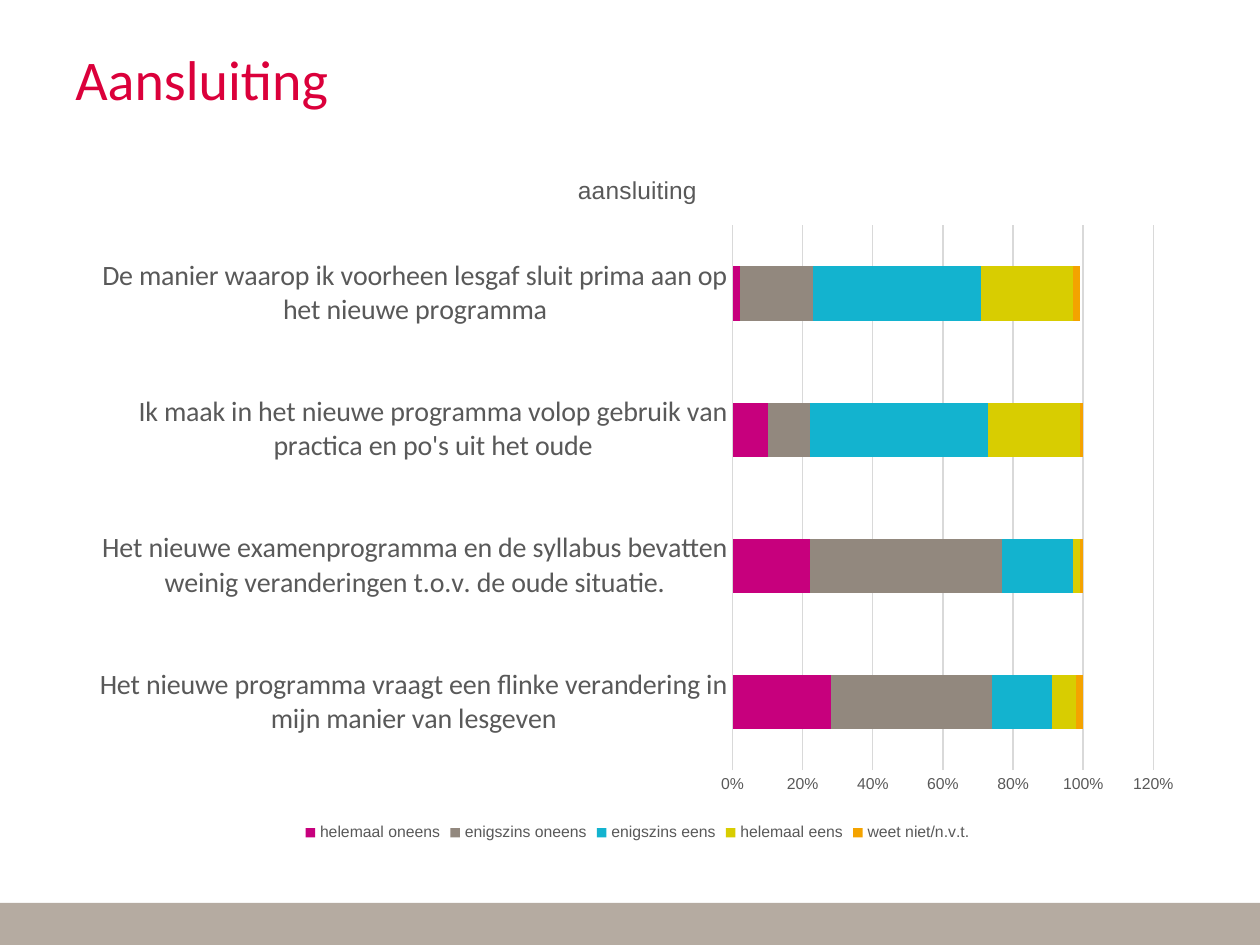
"""Builds the slide 'Aansluiting' with a stacked bar chart of survey answers."""
from typing import NamedTuple

from lxml.etree import SubElement
from pptx import Presentation
from pptx.chart.data import CategoryChartData
from pptx.dml.color import RGBColor
from pptx.enum.chart import XL_CHART_TYPE as ChartType
from pptx.enum.chart import XL_LEGEND_POSITION as LegendPosition
from pptx.enum.chart import XL_TICK_MARK as TickMark
from pptx.enum.shapes import MSO_SHAPE as Preset
from pptx.enum.text import MSO_ANCHOR as Anchor
from pptx.oxml.ns import qn
from pptx.util import Pt

GREY, GRID = "595959", "D9D9D9"


class Answer(NamedTuple):
    name: str
    color: str
    shares: tuple[float, ...]


STATEMENTS = (
    "Het nieuwe programma vraagt een flinke verandering in mijn manier van lesgeven",
    "Het nieuwe examenprogramma en de syllabus bevatten weinig veranderingen t.o.v. de oude situatie.",
    "Ik maak in het nieuwe programma volop gebruik van practica en po's uit het oude",
    "De manier waarop ik voorheen lesgaf sluit prima aan op het nieuwe programma",
)
ANSWERS = (
    Answer("helemaal oneens", "C7007D", (0.28, 0.22, 0.10, 0.02)),
    Answer("enigszins oneens", "92887E", (0.46, 0.55, 0.12, 0.21)),
    Answer("enigszins eens", "13B3CF", (0.17, 0.20, 0.51, 0.48)),
    Answer("helemaal eens", "D8CD01", (0.07, 0.02, 0.26, 0.26)),
    Answer("weet niet/n.v.t.", "F4A300", (0.02, 0.01, 0.01, 0.02)),
)
PLOT_LAYOUT = {"layoutTarget": "inner", "xMode": "edge", "yMode": "edge",
               "x": "0.585", "y": "0.11", "w": "0.376", "h": "0.78"}


def rgb(color: str) -> RGBColor:
    return RGBColor.from_string(color)


def apply(target, **values) -> None:
    for name, value in values.items():
        setattr(target, name, value)


def style_font(font, size: float, color: str, name: str = "Arial") -> None:
    apply(font, size=Pt(size), name=name, bold=False)
    font.color.rgb = rgb(color)


def style_line(line, color: str) -> None:
    line.color.rgb = rgb(color)
    line.width = Pt(0.75)


def add_footer(page) -> None:
    band = page.shapes.add_shape(Preset.RECTANGLE, Pt(0), Pt(516), Pt(720), Pt(24))
    band.shadow.inherit = False
    band.fill.solid()
    band.fill.fore_color.rgb = rgb("B5ABA1")
    band.line.fill.background()


def add_title(page, text: str) -> None:
    box = page.shapes.add_textbox(Pt(36), Pt(21.6), Pt(648), Pt(90))
    apply(box.text_frame, word_wrap=True, vertical_anchor=Anchor.TOP)
    span = box.text_frame.paragraphs[0].add_run()
    span.text = text
    style_font(span.font, 32, "DB003B", "Calibri")


def place_plot(chart) -> None:
    area = chart._chartSpace.chart.plotArea
    for old in area.findall(qn("c:layout")):
        area.remove(old)
    layout = SubElement(area, qn("c:layout"))
    area.insert(0, layout)
    manual = SubElement(layout, qn("c:manualLayout"))
    for tag, value in PLOT_LAYOUT.items():
        SubElement(manual, qn(f"c:{tag}")).set("val", value)


def add_survey_chart(page) -> None:
    data = CategoryChartData(number_format="0%")
    data.categories = STATEMENTS
    for answer in ANSWERS:
        data.add_series(answer.name, answer.shares)
    chart = page.shapes.add_chart(ChartType.BAR_STACKED, Pt(44.6), Pt(85),
                                  Pt(639.4), Pt(399), data).chart
    style_font(chart.font, 10, "000000")

    chart.has_title = True
    span = chart.chart_title.text_frame.paragraphs[0].add_run()
    span.text = "aansluiting"
    style_font(span.font, 14, GREY)
    chart.chart_title.include_in_layout = False

    chart.has_legend = True
    apply(chart.legend, position=LegendPosition.BOTTOM, include_in_layout=False)
    style_font(chart.legend.font, 9, GREY)

    plot = chart.plots[0]
    apply(plot, gap_width=150, overlap=100, vary_by_categories=False)
    for series, answer in zip(plot.series, ANSWERS):
        series.format.fill.solid()
        series.format.fill.fore_color.rgb = rgb(answer.color)

    statements, shares = chart.category_axis, chart.value_axis
    for axis in (statements, shares):
        apply(axis, major_tick_mark=TickMark.NONE, minor_tick_mark=TickMark.NONE)
    style_font(statements.tick_labels.font, 16, GREY, "Calibri")
    style_line(statements.format.line, GRID)
    style_font(shares.tick_labels.font, 9, GREY)
    apply(shares.tick_labels, number_format="0%", number_format_is_linked=False)
    apply(shares, minimum_scale=0, maximum_scale=1.2, major_unit=0.2,
          has_major_gridlines=True)
    style_line(shares.major_gridlines.format.line, GRID)
    shares.format.line.fill.background()
    place_plot(chart)


def main() -> None:
    deck = Presentation()
    apply(deck, slide_width=Pt(720), slide_height=Pt(540))
    page = deck.slides.add_slide(deck.slide_layouts[6])
    add_footer(page)
    add_title(page, "Aansluiting")
    add_survey_chart(page)
    deck.save("out.pptx")


if __name__ == "__main__":
    main()
